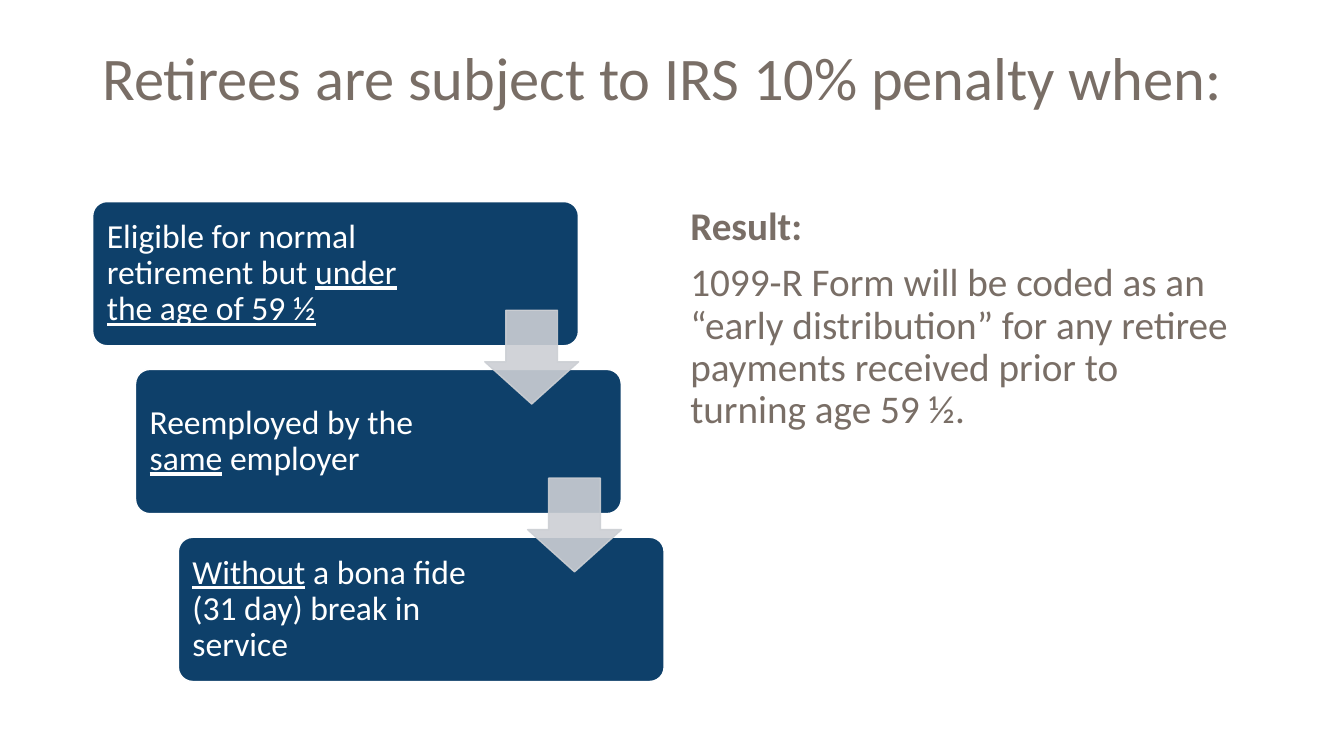
"""Build the slide on when retirees are subject to the IRS 10% penalty."""
from dataclasses import dataclass

from lxml import etree
from pptx import Presentation
from pptx.dml.color import RGBColor
from pptx.enum.shapes import MSO_SHAPE
from pptx.enum.text import MSO_ANCHOR, PP_ALIGN
from pptx.oxml.ns import qn
from pptx.util import Pt

ROUNDED, ARROW = MSO_SHAPE.ROUNDED_RECTANGLE, MSO_SHAPE.DOWN_ARROW
LEFT, TOP, MIDDLE = PP_ALIGN.LEFT, MSO_ANCHOR.TOP, MSO_ANCHOR.MIDDLE


@dataclass(frozen=True)
class Theme:
    """Colours, font and type sizes."""
    font: str = "Calibri"
    text: str = "796E66"
    step: str = "0E406A"
    white: str = "FFFFFF"
    arrow: str = "CCCFD4"
    title_size: float = 43.2
    body_size: float = 28
    step_size: float = 24


@dataclass(frozen=True)
class Span:
    """A piece of text with its own font formats."""
    text: str
    underline: bool = False
    bold: bool = False


@dataclass(frozen=True)
class Step:
    """One condition in the staircase."""
    spans: tuple[Span, ...]
    right_inset: float


@dataclass(frozen=True)
class Area:
    """A rectangle in points."""
    left: float
    top: float
    width: float
    height: float

    def shifted(self, count: int):
        """Return the area moved down the staircase."""
        return Area(self.left + count * STAIR_X, self.top + count * STAIR_Y,
                    self.width, self.height)

    def lengths(self) -> list[Pt]:
        """Return the four lengths for python-pptx."""
        return [Pt(value) for value in (self.left, self.top, self.width, self.height)]


THEME = Theme()
STAIR_X, STAIR_Y = 30.6, 119.9
TITLE_AREA = Area(66, 28.8, 828, 104.4)
RESULT_AREA = Area(486, 144, 408, 342.6)
FIRST_STEP = Area(66.2, 144, 347, 103)
FIRST_ARROW = Area(346.3, 221.6, 67, 67)

TITLE = [(Span("Retirees are subject to IRS 10% penalty when:"),)]
RESULT = [
    (Span("Result:", bold=True),),
    (Span("1099-R Form will be coded as an “early distribution” for any retiree "
          "payments received prior to turning age 59 ½."),),
]
STEPS = [
    Step((Span("Eligible for normal retirement but "),
          Span("under the age of 59 ½", underline=True)), 112),
    Step((Span("Reemployed by the "), Span("same", underline=True),
          Span(" employer")), 105),
    Step((Span("Without", underline=True),
          Span(" a bona fide (31 day) break in service")), 105),
]


def write(shape, paragraphs: list[tuple[Span, ...]], size: float, color: str,
          **frame_formats) -> None:
    """Fill a shape with formatted paragraphs."""
    frame = shape.text_frame
    for name, value in {"word_wrap": True, **frame_formats}.items():
        setattr(frame, name, value)
    for index, spans in enumerate(paragraphs):
        para = frame.add_paragraph() if index else frame.paragraphs[0]
        formats = {"alignment": LEFT, "line_spacing": 0.9,
                   "space_before": Pt(10 if index else 0)}
        for name, value in formats.items():
            setattr(para, name, value)
        for span in spans:
            run = para.add_run()
            run.text = span.text
            run.font.color.rgb = RGBColor.from_string(color)
            formats = {"name": THEME.font, "size": Pt(size), "bold": span.bold,
                       "underline": span.underline}
            for name, value in formats.items():
                setattr(run.font, name, value)


def add_block(page, kind: MSO_SHAPE, area: Area, adjustments: tuple[float, ...],
              fill: str, line: str):
    """Add a filled and outlined preset shape."""
    shape = page.shapes.add_shape(kind, *area.lengths())
    shape.shadow.inherit = False
    for index, value in enumerate(adjustments):
        shape.adjustments[index] = value
    shape.fill.solid()
    shape.fill.fore_color.rgb = RGBColor.from_string(fill)
    shape.line.color.rgb = RGBColor.from_string(line)
    shape.line.width = Pt(1)
    return shape


def add_step(page, step: Step, area: Area) -> None:
    """Add one condition box."""
    box = add_block(page, ROUNDED, area, (0.1,), THEME.step, THEME.white)
    write(box, [step.spans], THEME.step_size, THEME.white, vertical_anchor=MIDDLE,
          margin_left=Pt(7.2), margin_top=Pt(7.2), margin_bottom=Pt(7.2),
          margin_right=Pt(step.right_inset))


def add_arrow(page, area: Area) -> None:
    """Add a slightly transparent arrow."""
    arrow = add_block(page, ARROW, area, (0.55, 0.45), THEME.arrow, THEME.arrow)
    properties = arrow.fill._xPr
    for color in properties.iter(qn("a:srgbClr")):
        etree.SubElement(color, qn("a:alpha"), val="90000")


def main() -> None:
    """Build and save the deck."""
    deck = Presentation()
    deck.slide_width, deck.slide_height = Pt(960), Pt(540)
    page = deck.slides.add_slide(deck.slide_layouts[6])
    title = page.shapes.add_textbox(*TITLE_AREA.lengths())
    write(title, TITLE, THEME.title_size, THEME.text, vertical_anchor=MIDDLE,
          margin_bottom=Pt(50.4))
    for index, step in enumerate(STEPS):
        add_step(page, step, FIRST_STEP.shifted(index))
    for index in range(len(STEPS) - 1):
        add_arrow(page, FIRST_ARROW.shifted(index))
    result = page.shapes.add_textbox(*RESULT_AREA.lengths())
    write(result, RESULT, THEME.body_size, THEME.text, vertical_anchor=TOP)
    deck.save("out.pptx")


if __name__ == "__main__":
    main()
